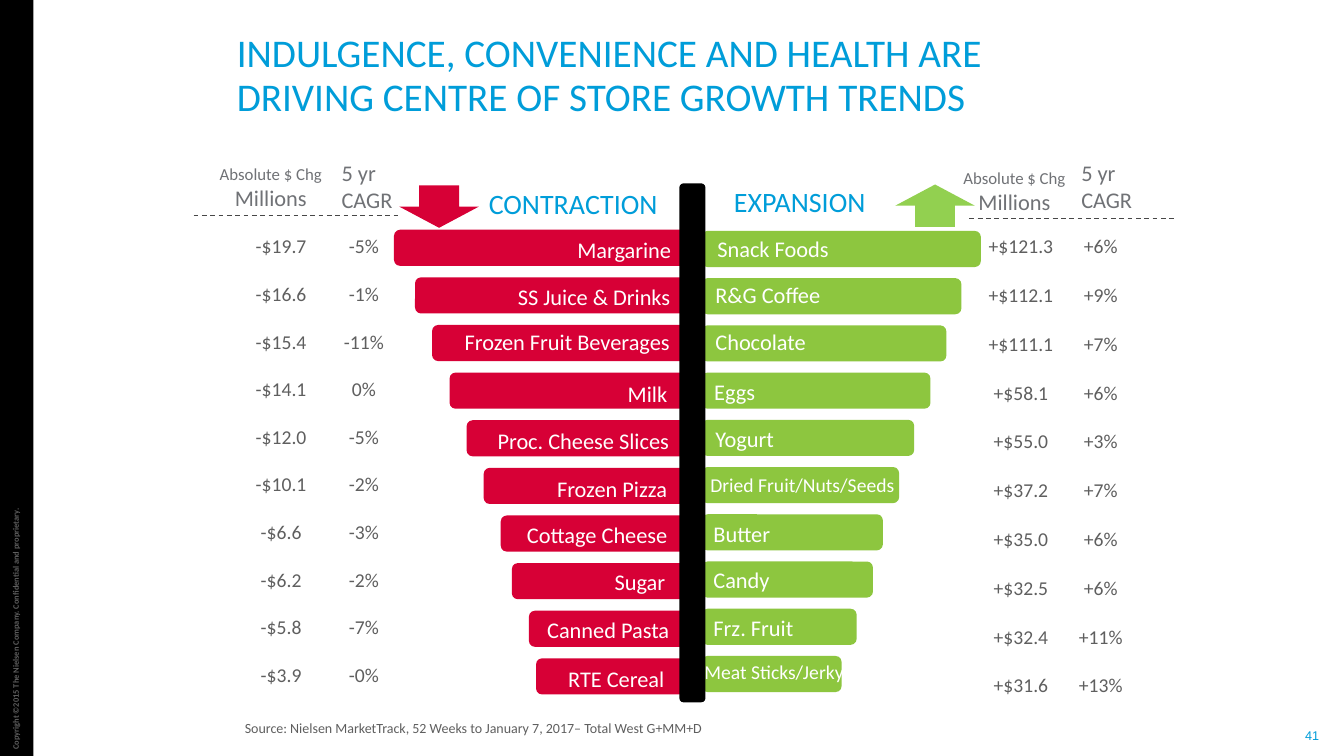
from lxml import etree
from pptx import Presentation
from pptx.dml.color import RGBColor
from pptx.enum.dml import MSO_LINE
from pptx.enum.shapes import MSO_CONNECTOR, MSO_SHAPE
from pptx.enum.text import MSO_ANCHOR, PP_ALIGN
from pptx.oxml.ns import qn
from pptx.util import Cm, Pt

RECT, ROUND, ARROW = MSO_SHAPE.RECTANGLE, MSO_SHAPE.ROUNDED_RECTANGLE, MSO_SHAPE.UP_ARROW
TOP, MIDDLE, BOTTOM = MSO_ANCHOR.TOP, MSO_ANCHOR.MIDDLE, MSO_ANCHOR.BOTTOM
LEFT, CENTER = PP_ALIGN.LEFT, PP_ALIGN.CENTER
STRAIGHT, DASH = MSO_CONNECTOR.STRAIGHT, MSO_LINE.DASH
BLACK = RGBColor(0x00, 0x00, 0x00)
WHITE = RGBColor(0xFF, 0xFF, 0xFF)
BLUE = RGBColor(0x00, 0x9D, 0xD9)
RED = RGBColor(0xD7, 0x00, 0x36)
GREEN = RGBColor(0x8D, 0xC6, 0x3F)
LIME = RGBColor(0x92, 0xD0, 0x50)
GRAY = RGBColor(0x5F, 0x5F, 0x5F)
SLATE = RGBColor(0x70, 0x72, 0x76)
DARK = RGBColor(0x47, 0x47, 0x47)
NO_STYLE = "{2D5ABB26-0587-4C30-8999-92F81FD0307C}"

deck = Presentation()
deck.slide_width, deck.slide_height = Cm(33.87), Cm(19.05)
slide = deck.slides.add_slide(deck.slide_layouts[6])
shapes = slide.shapes


def add_block(kind, x, y, w, h, color):
    block = shapes.add_shape(kind, Cm(x), Cm(y), Cm(w), Cm(h))
    block.shadow.inherit = False
    block.fill.solid()
    block.fill.fore_color.rgb = color
    block.line.fill.background()
    return block


def add_text(words, x, y, w, h, size, color, wrap=False, align=LEFT, anchor=TOP):
    box = shapes.add_textbox(Cm(x), Cm(y), Cm(w), Cm(h))
    frame = box.text_frame
    frame.text = words
    frame.word_wrap = wrap
    frame.vertical_anchor = anchor
    para = frame.paragraphs[0]
    para.alignment = align
    for run in para.runs:
        run.font.name = "Calibri"
        run.font.size = Pt(size)
        run.font.color.rgb = color
    return box


# Side band, copyright and page number
add_block(RECT, 0, 0, 0.84, 19.05, BLACK)
rights = add_text("Copyright ©2015 The Nielsen Company. Confidential and proprietary.",
                  -2.97, 15.52, 6.73, 0.51, 6, GRAY)
rights.rotation = 270
rights.text_frame.paragraphs[0].runs[0].font.bold = True
page = add_text("41", 32.89, 18.34, 0.38, 0.38, 9, BLUE, anchor=MIDDLE).text_frame
page.margin_left = page.margin_right = page.margin_top = page.margin_bottom = 0
page.paragraphs[0].runs[0].font.name = "Arial"

# Title
title = add_text("INDULGENCE, CONVENIENCE AND HEALTH ARE DRIVING CENTRE OF STORE GROWTH TRENDS",
                 5.72, 1.7, 22.86, 1.47, 28, BLUE, True, anchor=BOTTOM).text_frame
title.margin_right = Cm(1)
title.paragraphs[0].line_spacing = 0.95

# Rows: name, bar width, label left, top, width, size, change, growth
shrink = [
    ("Margarine", 7.67, 14.3, 5.82, 2.9, 16, "-$19.7", "-5%"),
    ("SS Juice & Drinks", 7.14, 12.8, 7.01, 4.39, 16, "-$16.6", "-1%"),
    ("Frozen Fruit Beverages", 6.71, 11.46, 8.15, 5.77, 16, "-$15.4", "-11%"),
    ("Milk", 6.27, 15.57, 9.45, 1.52, 16, "-$14.1", "0%"),
    ("Proc. Cheese Slices", 5.84, 12.29, 10.64, 4.9, 16, "-$12.0", "-5%"),
    ("Frozen Pizza", 5.41, 13.79, 11.84, 3.33, 16, "-$10.1", "-2%"),
    ("Cottage Cheese", 4.98, 13.03, 13, 4.11, 16, "-$6.6", "-3%"),
    ("Sugar", 4.7, 15.24, 14.2, 1.8, 16, "-$6.2", "-2%"),
    ("Canned Pasta", 4.27, 13.54, 15.39, 3.63, 16, "-$5.8", "-7%"),
    ("RTE Cereal", 4.09, 14.07, 16.64, 2.97, 16, "-$3.9", "-0%"),
]
growth = [
    ("Snack Foods", 7.04, 17.83, 5.79, 3.35, 16, "+$121.3", "+6%"),
    ("R&G Coffee", 6.55, 17.78, 6.96, 3.2, 16, "+$112.1", "+9%"),
    ("Chocolate", 6.17, 17.78, 8.15, 2.82, 16, "+$111.1", "+7%"),
    ("Eggs", 5.77, 17.75, 9.4, 1.55, 16, "+$58.1", "+6%"),
    ("Yogurt", 5.36, 17.78, 10.59, 2.01, 16, "+$55.0", "+3%"),
    ("Dried Fruit/Nuts/Seeds", 4.98, 17.65, 11.79, 5.21, 14, "+$37.2", "+7%"),
    ("Butter", 4.57, 17.73, 12.98, 1.98, 16, "+$35.0", "+6%"),
    ("Candy", 4.32, 17.73, 14.15, 1.93, 16, "+$32.5", "+6%"),
    ("Frz. Fruit", 3.91, 17.73, 15.34, 2.57, 16, "+$32.4", "+11%"),
    ("Meat Sticks/Jerky", 3.53, 17.5, 16.51, 4.06, 14, "+$31.6", "+13%"),
]

# Bars with labels: rows, colour, inner edge, share of width to the left, top, pitch
for rows, color, edge, share, top, pitch in (
        (growth, GREEN, 17.68, 0, 5.82, 1.19), (shrink, RED, 17.6, 1, 5.79, 1.2)):
    for i, (name, wide, x, y, w, size, *_) in enumerate(rows):
        add_block(ROUND, edge - share * wide, top + i * pitch, wide, 0.91, color)
        add_text(name, x, y, w, 0.94, size, WHITE)

# Value tables: rows, left, top, column widths, row height
for rows, x, y, cols, high in (
        (growth, 24.56, 5.59, (2.34, 1.68), 1.23), (shrink, 5.94, 5.61, (2.29, 1.88), 1.2)):
    table = shapes.add_table(len(rows), 2, Cm(x), Cm(y), Cm(sum(cols)), Cm(high * len(rows))).table
    table.first_row = table.horz_banding = False
    table._tbl.tblPr.find(qn("a:tableStyleId")).text = NO_STYLE
    for col, wide in zip(table.columns, cols):
        col.width = Cm(wide)
    for r, row in enumerate(rows):
        table.rows[r].height = Cm(high)
        for c, value in enumerate(row[-2:]):
            cell = table.cell(r, c)
            cell.fill.background()
            cell.margin_left = cell.margin_right = cell.margin_top = Cm(0.03)
            cell.margin_bottom = 0
            cell.vertical_anchor = MIDDLE
            cell.text_frame.text = value
            para = cell.text_frame.paragraphs[0]
            para.alignment = CENTER
            font = para.runs[0].font
            font.name, font.size, font.color.rgb = "Calibri", Pt(14), GRAY

# Side headings and arrows
for name, x, y in (("EXPANSION", 16.61, 3.81), ("CONTRACTION", 10.9, 3.86)):
    head = add_text(name, x, y, 7.09, 2.51, 20, BLUE, True, CENTER, MIDDLE).text_frame
    head.margin_top = head.margin_bottom = 0
add_block(ARROW, 22.56, 4.65, 2.01, 1.07, LIME)
add_block(ARROW, 10.06, 4.67, 2.01, 1.07, RED).rotation = 180

# Column headings with dashed rules
for x, y, rate, start, level in ((23.19, 4.11, 27, 24.43, 5.51), (4.45, 4.01, 8.36, 4.88, 5.44)):
    head = add_text("Absolute $ Chg ", x, y, 4.75, 1.45, 12, SLATE, True, CENTER)
    unit = head.text_frame.paragraphs[0].add_run()
    unit.text = "Millions"
    unit.font.name, unit.font.size, unit.font.color.rgb = "Calibri", Pt(16), SLATE
    add_text("5 yr\vCAGR", rate, 3.89, 1.8, 1.63, 16, SLATE)
    rule = shapes.add_connector(STRAIGHT, Cm(start), Cm(level), Cm(start + 5.2), Cm(level))
    rule.line.color.rgb = DARK
    rule.line.width = Pt(0.85)
    rule.line.dash_style = DASH
    etree.SubElement(rule._element.spPr, qn("a:effectLst"))

# Centre post and source
add_block(ROUND, 17.12, 4.62, 0.66, 13.08, BLACK)
source = add_text("Source: Nielsen MarketTrack, 52 Weeks to January 7, 2017– Total West G+MM+D",
                  5.92, 18.06, 22.78, 0.69, 10, GRAY, True)
source.text_frame.paragraphs[0].line_spacing = 0.9

deck.save("out.pptx")
